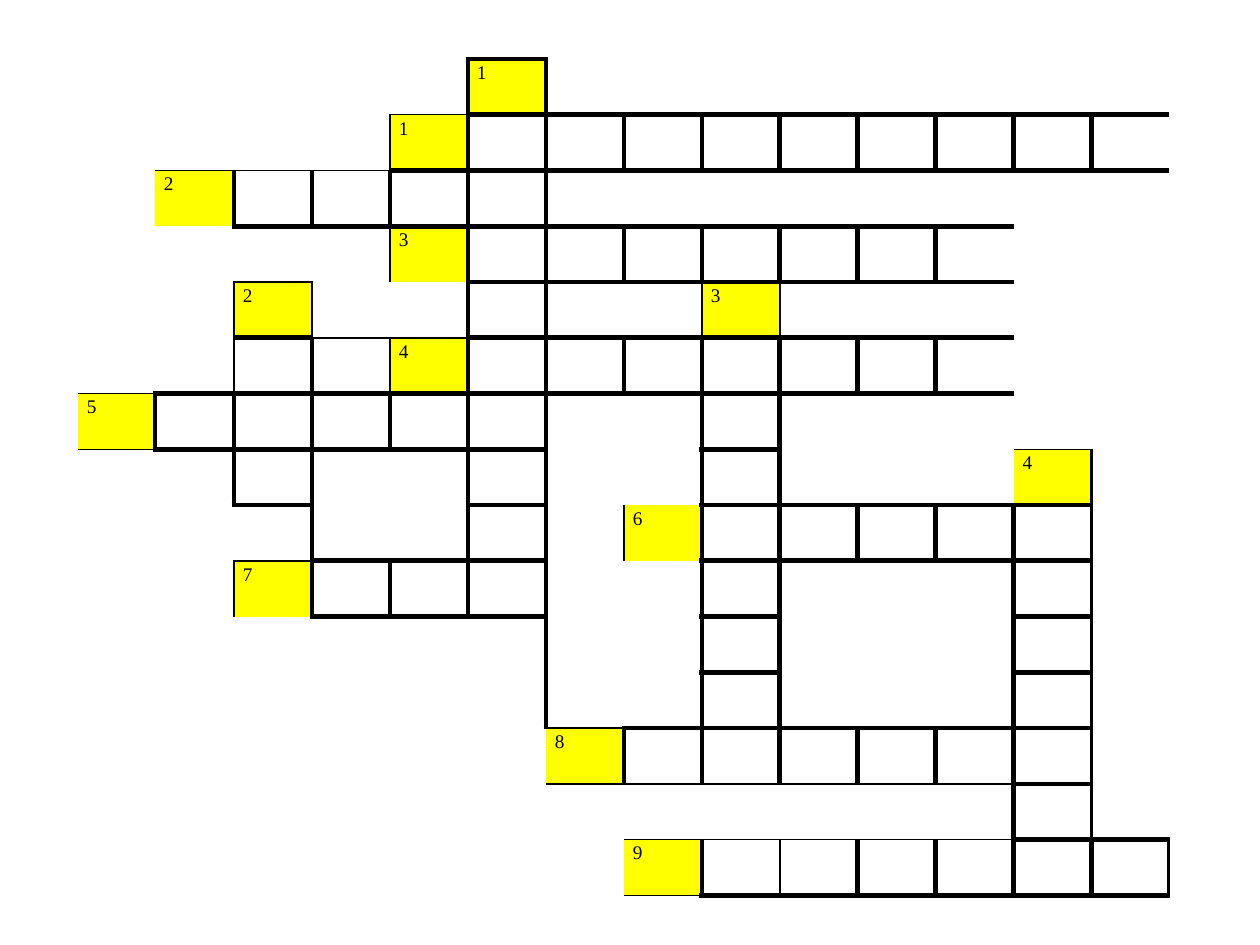
"""Build a crossword slide whose grid is one table with bordered cells."""
from dataclasses import dataclass

from lxml import etree
from pptx import Presentation
from pptx.dml.color import RGBColor
from pptx.enum.text import MSO_ANCHOR, PP_ALIGN
from pptx.oxml.ns import qn
from pptx.util import Emu, Pt

TOP = MSO_ANCHOR.TOP
LEFT = PP_ALIGN.LEFT
EMU_PER_PX = 914400 / 126
BLANK_LAYOUT = 6


@dataclass(frozen=True)
class Theme:
    """Colours, type and line weights of the crossword."""

    ink: str = "000000"
    clue_fill: str = "FFFF00"
    font: str = "Times New Roman"
    clue_size: float = 11
    line_spacing: float = 1.15


THEME = Theme()
SLIDE_SIZE = (1260, 945)
GRID_LEFT, GRID_TOP, GRID_HEIGHT = 78, 59, 837
COLUMN_WIDTHS = [77, 79] + [78] * 11 + [77]
SIDE_INSET = 9
EDGES = ("a:lnL", "a:lnT", "a:lnR", "a:lnB")
EDGE_WEIGHTS = {"1": 1, "2": 2.25, "3": 3}

GRID = [
    "0000 0030/1x4 . . . 3333#1 3003/1x8 . . . . . . .",
    "0000 0011/1x3 . . 1133#1 3333 3333 3033 3033 3033 3033 3033 3033 3000",
    "0000 0131#2 3133 3133 3333 3333 3303/1x6 . . . . . 0300/2x2 .",
    "0010/1x4 . . . 1331#3 3333 3333 3333 3333 3333 3333 3313 . .",
    "0010/1x2 . 1113#2 1031/1x2 . 3333 3313/1x2 . 1313#3 1303/1x3 . . 0001/3x1 0003/10x1",
    "0011/1x2 . 1333 3113 1133#4 3333 3333 3333 3333 3333 3333 3313 . .",
    "0131#5 3333 3333 3333 3333 3333 3330/2x2 . 3333 3303/2x3 . . . .",
    "0130/1x2 . 3333 3303/2x1 0333/2x1 3333 . . 3333 . . . 0123#4 .",
    "0000/1x3 . . . . 3333 3010 1031#6 3333 3333 3333 3333 3323 .",
    "0010/1x2 . 1131#7 3333 3333 3333 3031/3x2 . 3333 3330/1x3 . . 3323 .",
    "0000/1x4 . . . 0300/2x2 . . . 3333 3003/2x1 0030/1x2 . 3323 .",
    "0000/1x4 . . . . . . . 3333 . 0033/1x2 . 3323 .",
    "0000/1x4 . . . 0000/3x1 0000/3x1 0131#8 3331 3331 3331 3331 3331 3323 .",
    "0000/1x4 . . . . . 0100/2x1 0131/1x5 . . . . 3323 .",
    "0000/1x4 . . . . . . 0131#9 3113 1133 3133 3133 3333 3323",
]


def px(length):
    """Turn pixels into EMU."""
    return Emu(round(length * EMU_PER_PX))


def parse_square(code):
    """Split 'ltrb/rowsxcols#clue' into edge weights, span and clue."""
    layout, _, clue = code.partition("#")
    edges, _, extent = layout.partition("/")
    row_span, column_span = map(int, (extent or "1x1").split("x"))
    return edges, row_span, column_span, clue


def draw_edges(cell, edges):
    """Give a cell its left, top, right and bottom lines."""
    properties = cell._tc.get_or_add_tcPr()
    for tag, weight in zip(EDGES, edges):
        line = etree.SubElement(properties, qn(tag))
        if weight in EDGE_WEIGHTS:
            line.set("w", str(Pt(EDGE_WEIGHTS[weight])))
            fill = etree.SubElement(line, qn("a:solidFill"))
            etree.SubElement(fill, qn("a:srgbClr"), val=THEME.ink)
        else:
            etree.SubElement(line, qn("a:noFill"))


def write_clue(cell, clue):
    """Put a clue number on a highlighted square."""
    cell.fill.solid()
    cell.fill.fore_color.rgb = RGBColor.from_string(THEME.clue_fill)
    paragraph = cell.text_frame.paragraphs[0]
    paragraph.text = clue
    paragraph.alignment = LEFT
    paragraph.line_spacing = THEME.line_spacing
    font = paragraph.runs[0].font
    font.name = THEME.font
    font.size = Pt(THEME.clue_size)
    font.color.rgb = RGBColor.from_string(THEME.ink)


def fill_square(table, row, column, code):
    """Merge, outline and number one square of the crossword."""
    edges, row_span, column_span, clue = parse_square(code)
    square = table.cell(row, column)
    if row_span * column_span > 1:
        square.merge(table.cell(row + row_span - 1, column + column_span - 1))
    square.margin_left = square.margin_right = px(SIDE_INSET)
    square.margin_top = square.margin_bottom = 0
    square.vertical_anchor = TOP
    draw_edges(square, edges)
    if clue:
        write_clue(square, clue)
    else:
        square.fill.background()


def add_crossword(slide):
    """Add the crossword table described by GRID."""
    rows = [line.split() for line in GRID]
    table = slide.shapes.add_table(
        len(rows), len(COLUMN_WIDTHS), px(GRID_LEFT), px(GRID_TOP),
        px(sum(COLUMN_WIDTHS)), px(GRID_HEIGHT)).table
    table.first_row = table.horz_banding = False
    for column, width in zip(table.columns, COLUMN_WIDTHS):
        column.width = px(width)
    for row_index, codes in enumerate(rows):
        table.rows[row_index].height = px(GRID_HEIGHT / len(rows))
        for column_index, code in enumerate(codes):
            if code == ".":
                table.cell(row_index, column_index).fill.background()
            else:
                fill_square(table, row_index, column_index, code)


def main():
    """Create and save the presentation."""
    presentation = Presentation()
    presentation.slide_width, presentation.slide_height = map(px, SLIDE_SIZE)
    slide = presentation.slides.add_slide(presentation.slide_layouts[BLANK_LAYOUT])
    add_crossword(slide)
    presentation.save("out.pptx")


if __name__ == "__main__":
    main()
